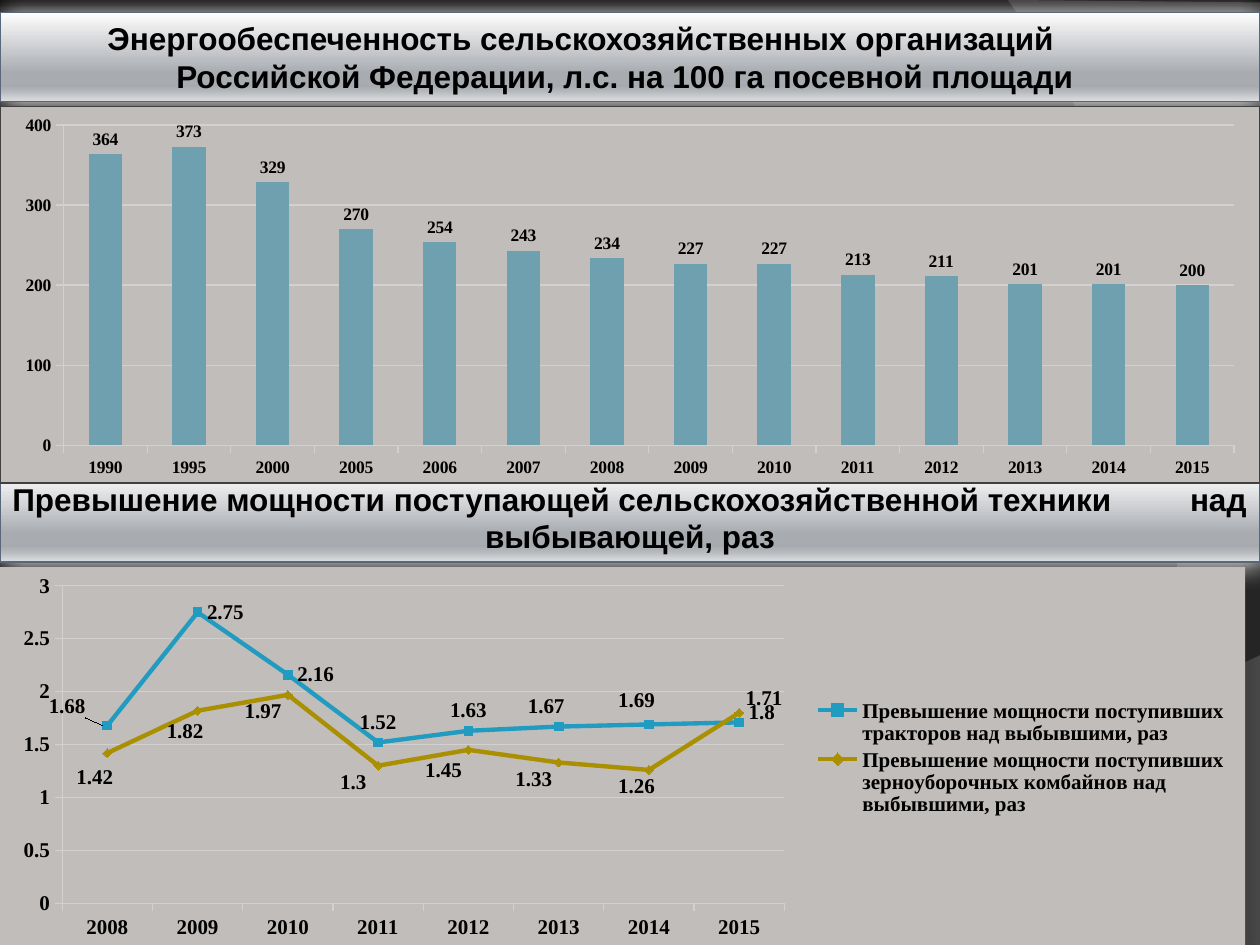
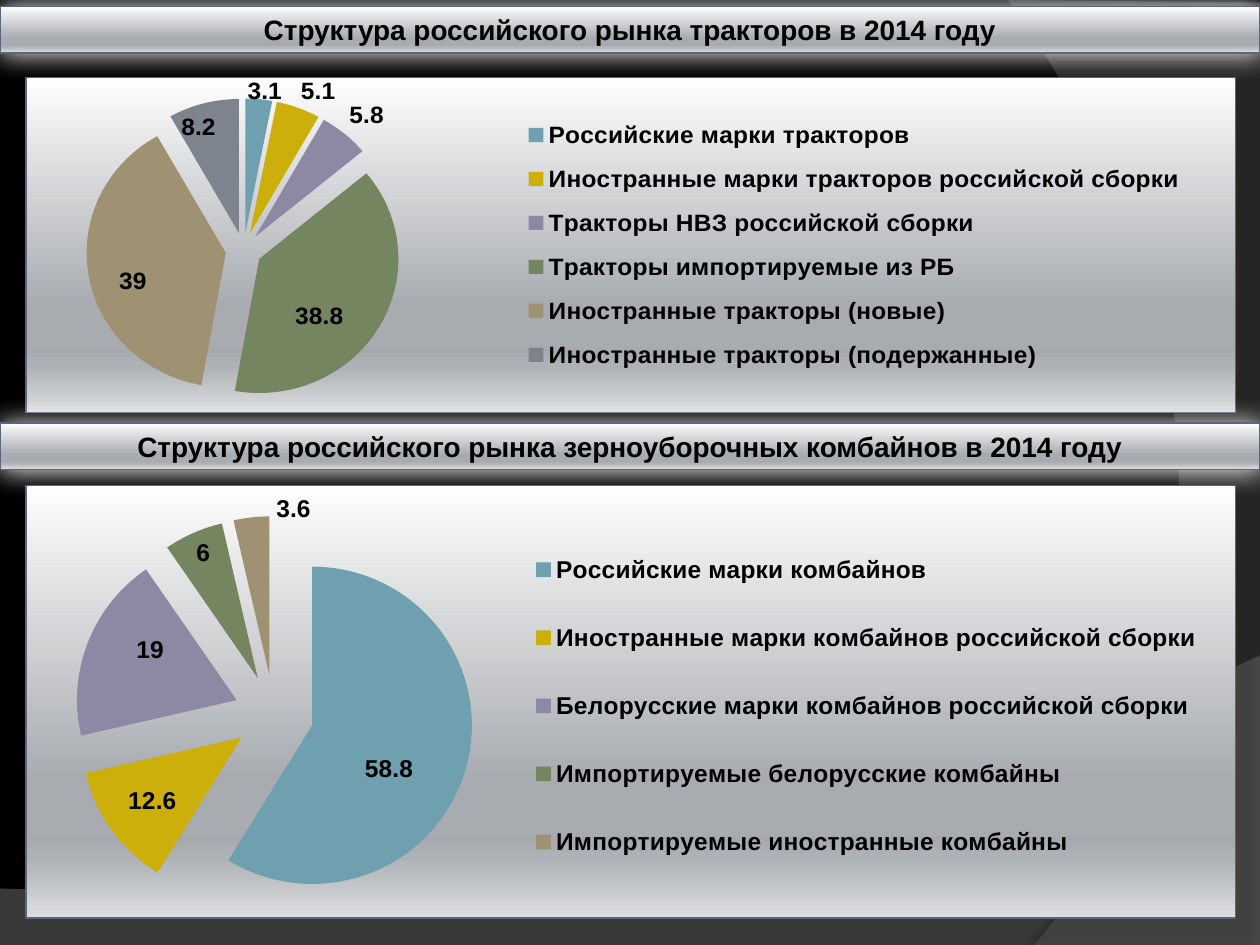
from dataclasses import dataclass, field
from typing import Optional

from lxml.etree import SubElement
from pptx import Presentation
from pptx.chart.data import CategoryChartData
from pptx.dml.color import RGBColor
from pptx.enum.chart import XL_CHART_TYPE as Kind, XL_LABEL_POSITION as Pos
from pptx.enum.chart import XL_LEGEND_POSITION, XL_MARKER_STYLE as Marker, XL_TICK_MARK
from pptx.enum.shapes import MSO_SHAPE
from pptx.enum.text import MSO_ANCHOR as Anchor, MSO_AUTO_SIZE, PP_ALIGN as Align
from pptx.oxml import parse_xml
from pptx.oxml.ns import nsdecls, qn
from pptx.util import Cm, Pt

# Shared look
W, H = 25.4, 19.05
BLACK, STEEL, CHART_GREY, GRID = "000000", "59677D", "C0BDBA", "D3D1CF"
METAL = ((0, "FEFEFE"), (68, "A8ABB0"), (81, "A5A8AD"), (86, "AEB1B5"), (100, "DDDEE0"))
PALETTE = ("6EA0B0", "CCAF0A", "8D89A4", "748560", "9E9273", "7E848D")
SANS, SERIF = "Arial", "Times New Roman"

Box = tuple[float, float, float, float]
Point = tuple[float, float]


@dataclass
class Shadow:
    color: str
    alpha: int
    blur: float
    dist: float
    angle: int


@dataclass
class Swoosh:
    corners: list[Point]
    curve: tuple[Point, Point, Point]
    color: str
    alpha: int
    shadow: Shadow


@dataclass
class Line:
    text: str
    align: Align = Align.CENTER
    right: float = 0
    tab: float = 0


@dataclass
class Band:
    lines: list[Line]
    top: float
    height: float
    size: int
    anchor: Anchor


@dataclass
class Series:
    name: str
    values: list[float]
    label_spots: list[Pos]
    color: str = PALETTE[0]
    marker: Optional[Marker] = None
    nudges: dict[int, Point] = field(default_factory=dict)


@dataclass
class Graph:
    kind: Kind
    box: Box
    cats: list[str]
    series: list[Series]
    plot: Box
    size: int
    font: str = SANS
    legend: Optional[Box] = None
    border: Optional[str] = None
    scale: Optional[tuple[float, float]] = None
    explode: int = 0


BAND_GLOW = Shadow("FFFFFF", 100, 16, 0, 0)
SWOOSHES = [
    Swoosh([(0, 17.91), (0, H), (W, H), (W, 13.21)],
           ((14.2, 18.52), (9.93, 18.26), (0, 17.91)), "7F7F7F", 45,
           Shadow(BLACK, 35, 4, 3.5, 270)),
    Swoosh([(W, 0.05), (W, H), (20.85, H)],
           ((23.75, 15.72), (25.86, 7.62), (20.32, 0)), "5E5E5E", 40,
           Shadow(BLACK, 45, 4, 4, 180)),
]


def rgb(color: str) -> RGBColor:
    return RGBColor.from_string(color)


def solid(fmt, color: str) -> None:
    fmt.fill.solid()
    fmt.fill.fore_color.rgb = rgb(color)


def metal_xml(ns: str = "") -> str:
    stops = "".join(f'<a:gs pos="{pos * 1000}"><a:srgbClr val="{c}"/></a:gs>' for pos, c in METAL)
    return (f'<a:gradFill rotWithShape="1" {ns}><a:gsLst>{stops}</a:gsLst>'
            '<a:lin ang="5400000" scaled="0"/></a:gradFill>')


def set_font(font, *, name: str = SANS, size: float = 14, bold: bool = True,
             color: str = BLACK) -> None:
    font.name, font.size, font.bold = name, Pt(size), bold
    font.color.rgb = rgb(color)


def add_text(p, text: str, *, align: Align = Align.CENTER, right: float = 0,
             tab: float = 0, **font) -> None:
    p.alignment = align
    props = p._p.get_or_add_pPr()
    if right:
        props.set("marR", str(Cm(right)))
    if tab:
        tabs = SubElement(props, qn("a:tabLst"))
        SubElement(tabs, qn("a:tab"), pos=str(Cm(tab)), algn="l")
    r = p.add_run()
    r.text = text
    set_font(r.font, **font)


def add_shadow(sp, shadow: Shadow) -> None:
    sp.shadow.inherit = False
    effects = sp.element.spPr.find(qn("a:effectLst"))
    outer = SubElement(effects, qn("a:outerShdw"), blurRad=str(Pt(shadow.blur)),
                       dist=str(Pt(shadow.dist)), dir=str(shadow.angle * 60000),
                       algn="ctr", rotWithShape="0")
    color = SubElement(outer, qn("a:srgbClr"), val=shadow.color)
    SubElement(color, qn("a:alpha"), val=str(shadow.alpha * 1000))


def bezier(start: Point, curve: tuple[Point, Point, Point], steps: int = 40) -> list[Point]:
    points = (start, *curve)
    result = []
    for i in range(1, steps + 1):
        t = i / steps
        weights = ((1 - t) ** 3, 3 * t * (1 - t) ** 2, 3 * t * t * (1 - t), t ** 3)
        result.append(tuple(sum(k * pt[axis] for k, pt in zip(weights, points))
                            for axis in (0, 1)))
    return result


def add_swoosh(s, swoosh: Swoosh) -> None:
    outline = swoosh.corners + bezier(swoosh.corners[-1], swoosh.curve)
    vertices = [(Cm(x), Cm(y)) for x, y in outline]
    builder = s.shapes.build_freeform(*vertices[0])
    builder.add_line_segments(vertices[1:], close=True)
    sp = builder.convert_to_shape()
    solid(sp, swoosh.color)
    clr = sp.element.spPr.find(qn("a:solidFill")).find(qn("a:srgbClr"))
    SubElement(clr, qn("a:alpha"), val=str(swoosh.alpha * 1000))
    sp.line.fill.background()
    add_shadow(sp, swoosh.shadow)


def add_band(s, band: Band) -> None:
    sp = s.shapes.add_shape(MSO_SHAPE.RECTANGLE, 0, Cm(band.top), Cm(W), Cm(band.height))
    sp.line.color.rgb, sp.line.width = rgb(STEEL), Pt(0.75)
    sp.element.spPr.find(qn("a:prstGeom")).addnext(parse_xml(metal_xml(nsdecls("a"))))
    add_shadow(sp, BAND_GLOW)
    tf = sp.text_frame
    tf.word_wrap, tf.vertical_anchor = True, band.anchor
    tf.auto_size = MSO_AUTO_SIZE.SHAPE_TO_FIT_TEXT
    for i, line in enumerate(band.lines):
        p = tf.add_paragraph() if i else tf.paragraphs[0]
        add_text(p, line.text, align=line.align, right=line.right, tab=line.tab, size=band.size)


def set_layout(parent, index: int, places: dict[str, float], head: str = "") -> None:
    for old in parent.findall(qn("c:layout")):
        parent.remove(old)
    sizes = "".join(f'<c:{k} val="{v}"/>' for k, v in places.items())
    parent.insert(index, parse_xml(f'<c:layout {nsdecls("c")}><c:manualLayout>{head}'
                                   f'{sizes}</c:manualLayout></c:layout>'))


def style_axes(chart, graph: Graph) -> None:
    top, step = graph.scale
    value = chart.value_axis
    value.minimum_scale, value.maximum_scale, value.major_unit = 0, top, step
    value.has_major_gridlines = True
    value.major_gridlines.format.line.color.rgb = rgb(GRID)
    for axis in (value, chart.category_axis):
        axis.major_tick_mark = XL_TICK_MARK.OUTSIDE
        axis.format.line.color.rgb = rgb(GRID)


def style_series(ser, data: Series, graph: Graph) -> None:
    if data.marker is not None:
        ser.smooth = False
        ser.format.line.color.rgb, ser.format.line.width = rgb(data.color), Pt(2.5)
        ser.marker.style, ser.marker.size = data.marker, 5
        solid(ser.marker.format, data.color)
        ser.marker.format.line.color.rgb = rgb(data.color)
    else:
        solid(ser.format, data.color)
    if graph.kind == Kind.PIE:
        explosion = parse_xml(f'<c:explosion {nsdecls("c")} val="{graph.explode}"/>')
        ser._element.find(qn("c:spPr")).addnext(explosion)
        for i, color in enumerate(PALETTE[:len(data.values)]):
            solid(ser.points[i].format, color)
    ser.data_labels.show_value = True
    set_font(ser.data_labels.font, name=graph.font, size=graph.size)
    for i, spot in enumerate(data.label_spots):
        label = ser.points[i].data_label
        set_font(label.font, name=graph.font, size=graph.size)
        label.position = spot
    for node in ser._element.iter(qn("c:dLbl")):
        nudge = data.nudges.get(int(node.find(qn("c:idx")).get("val")))
        if nudge:
            set_layout(node, 1, dict(zip("xy", nudge)))


def add_graph(s, graph: Graph) -> None:
    data = CategoryChartData()
    data.categories = graph.cats
    for item in graph.series:
        data.add_series(item.name, item.values)
    chart = s.shapes.add_chart(graph.kind, *map(Cm, graph.box), data).chart
    chart.has_title = False
    set_font(chart.font, name=graph.font, size=graph.size)
    plot = chart.plots[0]
    plot.vary_by_categories = graph.kind == Kind.PIE
    if graph.kind == Kind.COLUMN_CLUSTERED:
        plot.gap_width = 150
    if graph.scale:
        style_axes(chart, graph)
    for ser, item in zip(plot.series, graph.series):
        style_series(ser, item, graph)

    # Plot and legend places
    body = chart.element.find(qn("c:chart"))
    edges = '<c:xMode val="edge"/><c:yMode val="edge"/>'
    set_layout(body.find(qn("c:plotArea")), 0, dict(zip("xywh", graph.plot)),
               '<c:layoutTarget val="inner"/>' + edges)
    chart.has_legend = graph.legend is not None
    if graph.legend:
        chart.legend.position = XL_LEGEND_POSITION.RIGHT
        chart.legend.include_in_layout = False
        set_font(chart.legend.font, name=graph.font, size=graph.size)
        set_layout(body.find(qn("c:legend")), 1, dict(zip("xywh", graph.legend)), edges)

    # Chart area
    flat = f'<a:solidFill><a:srgbClr val="{CHART_GREY}"/></a:solidFill>'
    fill = metal_xml() if graph.kind == Kind.PIE else flat
    stroke = (f'<a:solidFill><a:srgbClr val="{graph.border}"/></a:solidFill>'
              if graph.border else "<a:noFill/>")
    body.addnext(parse_xml(f'<c:spPr {nsdecls("c", "a")}>{fill}'
                           f'<a:ln w="{Pt(0.75)}">{stroke}</a:ln></c:spPr>'))


# Slide contents
POWER = [
    Band([Line("Энергообеспеченность сельскохозяйственных организаций", right=1.98),
          Line("Российской Федерации, л.с. на 100 га посевной площади", right=0.2)],
         0.25, 1.8, 18, Anchor.MIDDLE),
    Band([Line("Превышение мощности поступающей сельскохозяйственной техники\tнад",
               Align.LEFT, tab=23.74), Line("выбывающей, раз")], 9.53, 1.8, 18, Anchor.MIDDLE),
    Graph(Kind.COLUMN_CLUSTERED, (0, 2.13, W, 7.62),
          ["1990", "1995", "2000", *map(str, range(2005, 2016))],
          [Series("Series 1", [364, 373, 329, 270, 254, 243, 234, 227, 227, 213, 211, 201, 201,
                               200], [Pos.OUTSIDE_END] * 14)],
          (0.05, 0.05, 0.93, 0.85), 10, SERIF, border="404040", scale=(400, 100)),
    Graph(Kind.LINE_MARKERS, (0, 11.43, 25.1, 7.62), [str(y) for y in range(2008, 2016)],
          [Series("Превышение мощности поступивших тракторов над выбывшими, раз",
                  [1.68, 2.75, 2.16, 1.52, 1.63, 1.67, 1.69, 1.71],
                  [Pos.LEFT] + [Pos.RIGHT] * 2 + [Pos.ABOVE] * 5, "219BC0", Marker.SQUARE,
                  {0: (-0.01, -0.05), 5: (-0.01, 0), 6: (-0.01, -0.01), 7: (0.02, -0.01)}),
           Series("Превышение мощности поступивших зерноуборочных комбайнов над выбывшими, раз",
                  [1.42, 1.82, 1.97, 1.3, 1.45, 1.33, 1.26, 1.8],
                  [Pos.BELOW] * 7 + [Pos.RIGHT], "AA9000", Marker.DIAMOND,
                  {0: (-0.01, 0.01), 1: (-0.01, 0), 2: (-0.02, -0.01), 3: (-0.02, -0.01),
                   4: (-0.02, 0), 5: (-0.02, -0.01), 6: (-0.01, -0.01)})],
          (0.05, 0.05, 0.58, 0.84), 12, SERIF, legend=(0.65, 0.34, 0.34, 0.33), scale=(3, 0.5)),
]
MARKET = [
    Band([Line("Структура российского рынка тракторов в 2014 году")], 0.13, 0.94, 16, Anchor.TOP),
    Graph(Kind.PIE, (0.51, 1.32, 24.41, 7.01),
          ["Российские марки тракторов", "Иностранные марки тракторов российской сборки",
           "Тракторы НВЗ российской сборки", "Тракторы импортируемые из РБ",
           "Иностранные тракторы (новые)", "Иностранные тракторы (подержанные)"],
          [Series("Series 1", [3.1, 5.1, 5.8, 38.8, 39, 8.2],
                  [Pos.OUTSIDE_END] * 3 + [Pos.CENTER] * 2 + [Pos.INSIDE_END],
                  nudges={0: (-0.01, 0), 3: (0, 0.07), 4: (-0.02, 0.05), 5: (-0.02, 0.01)})],
          (0.05, 0.06, 0.26, 0.91), 14, legend=(0.4, 0.08, 0.57, 0.84), border=STEEL,
          explode=13),
    Band([Line("Структура российского рынка зерноуборочных комбайнов в 2014 году")],
         8.53, 0.94, 16, Anchor.TOP),
    Graph(Kind.PIE, (0.51, 9.73, 24.41, 8.79),
          ["Российские марки комбайнов", "Иностранные марки комбайнов российской сборки",
           "Белорусские марки комбайнов российской сборки",
           "Импортируемые белорусские комбайны", "Импортируемые иностранные комбайны"],
          [Series("Series 1", [58.8, 12.6, 19, 6, 3.6],
                  [Pos.CENTER] * 3 + [Pos.INSIDE_END, Pos.OUTSIDE_END],
                  nudges={0: (0, 0.05), 1: (-0.02, 0.04), 2: (-0.01, -0.05), 4: (0.05, 0.03)})],
          (0.04, 0.07, 0.33, 0.92), 14, legend=(0.41, 0.07, 0.57, 0.88), border=STEEL,
          explode=25),
]


def main() -> None:
    prs = Presentation()
    prs.slide_width, prs.slide_height = Cm(W), Cm(H)
    for parts in (POWER, MARKET):
        s = prs.slides.add_slide(prs.slide_layouts[6])
        solid(s.background, BLACK)
        for swoosh in SWOOSHES:
            add_swoosh(s, swoosh)
        for part in parts:
            if isinstance(part, Band):
                add_band(s, part)
            else:
                add_graph(s, part)
    prs.save("out.pptx")


if __name__ == "__main__":
    main()
